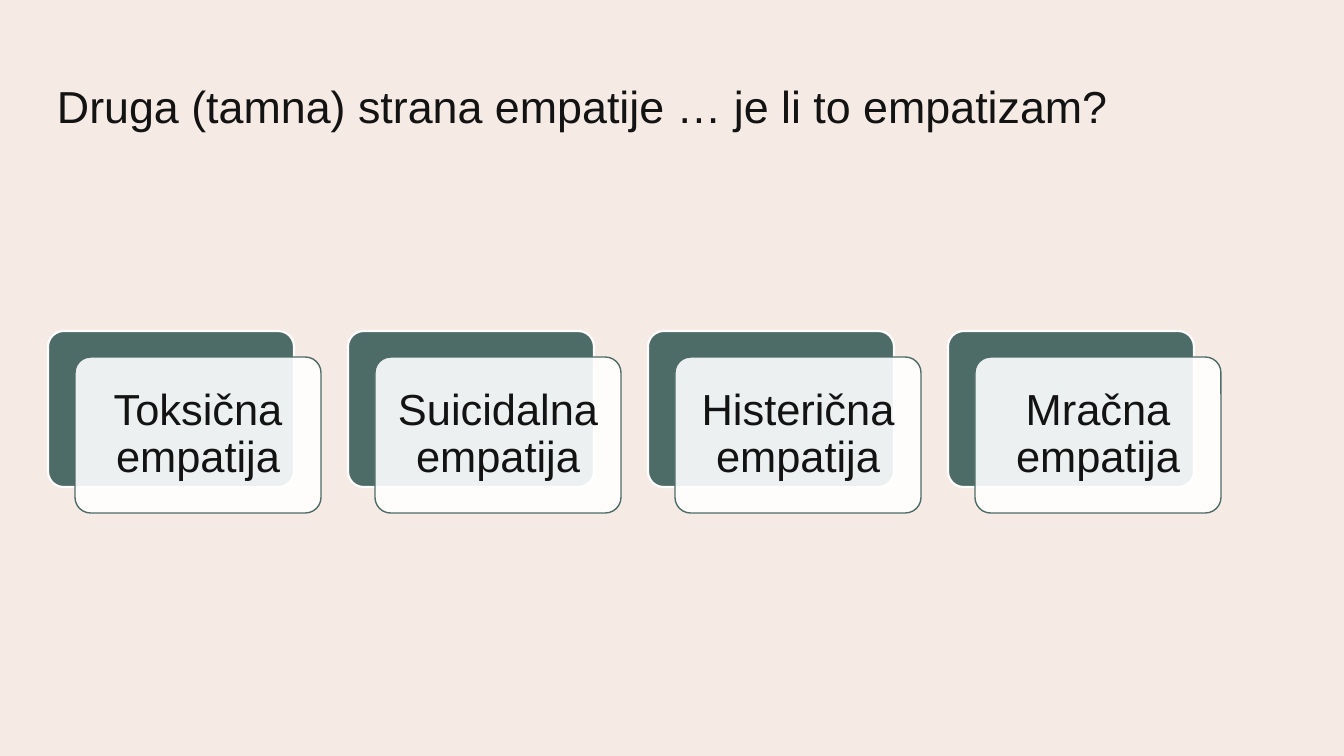
from dataclasses import dataclass

from lxml.etree import SubElement
from pptx import Presentation
from pptx.dml.color import RGBColor
from pptx.enum.shapes import MSO_SHAPE
from pptx.enum.text import MSO_ANCHOR, PP_ALIGN
from pptx.oxml.ns import qn
from pptx.util import Emu, Pt


@dataclass(frozen=True)
class Theme:
    background: RGBColor = RGBColor.from_string("F5EBE4")
    green: RGBColor = RGBColor.from_string("4E6C67")
    white: RGBColor = RGBColor.from_string("FFFFFF")
    ink: RGBColor = RGBColor.from_string("131313")
    font: str = "Arial"
    title_size: int = 32
    card_size: int = 31


THEME = Theme()
TITLE = "Druga (tamna) strana empatije … je li to empatizam?"
EMPATHY_TYPES = [
    "Toksična empatija",
    "Suicidalna empatija",
    "Histerična empatija",
    "Mračna empatija",
]


def px(length):
    return Emu(round(length * 12192000 / 1344))


def write_text(frame, text, size, align, anchor):
    frame.word_wrap = True
    frame.vertical_anchor = anchor
    para = frame.paragraphs[0]
    para.text = text
    para.alignment = align
    para.line_spacing = 0.9
    para.font.name = THEME.font
    para.font.size = Pt(size)
    para.font.color.rgb = THEME.ink


def add_title(page, left, top, width, height):
    box = page.shapes.add_textbox(px(left), px(top), px(width), px(height))
    write_text(box.text_frame, TITLE, THEME.title_size, PP_ALIGN.LEFT, MSO_ANCHOR.BOTTOM)


def add_panel(page, left, top, width, height, fill, line, line_width):
    panel = page.shapes.add_shape(
        MSO_SHAPE.ROUNDED_RECTANGLE, px(left), px(top), px(width), px(height)
    )
    panel.adjustments[0] = 0.1
    panel.shadow.inherit = False
    panel.fill.solid()
    panel.fill.fore_color.rgb = fill
    panel.line.color.rgb = line
    panel.line.width = Pt(line_width)
    return panel


def add_card(page, left, top, width, height, text):
    shift_x, shift_y, inset = 27, 26, 13
    add_panel(page, left, top, width, height, THEME.green, THEME.white, 1.5)
    front = add_panel(
        page, left + shift_x, top + shift_y, width, height, THEME.white, THEME.green, 1
    )
    color = front.fill._xPr.find(qn("a:solidFill"))[0]
    SubElement(color, qn("a:alpha"), val="90000")
    frame = front.text_frame
    frame.margin_left = frame.margin_right = px(inset)
    frame.margin_top = frame.margin_bottom = px(inset)
    write_text(frame, text, THEME.card_size, PP_ALIGN.CENTER, MSO_ANCHOR.MIDDLE)


def add_card_row(page, left, top, card_width, card_height, pitch):
    for index, text in enumerate(EMPATHY_TYPES):
        add_card(page, left + index * pitch, top, card_width, card_height, text)


def main():
    deck = Presentation()
    deck.slide_width, deck.slide_height = px(1344), px(756)
    page = deck.slides.add_slide(deck.slide_layouts[6])
    page.background.fill.solid()
    page.background.fill.fore_color.rgb = THEME.background
    add_title(page, 47, 31, 1174, 107)
    add_card_row(page, 48, 331, 246, 156, 300)
    deck.save("out.pptx")


if __name__ == "__main__":
    main()
